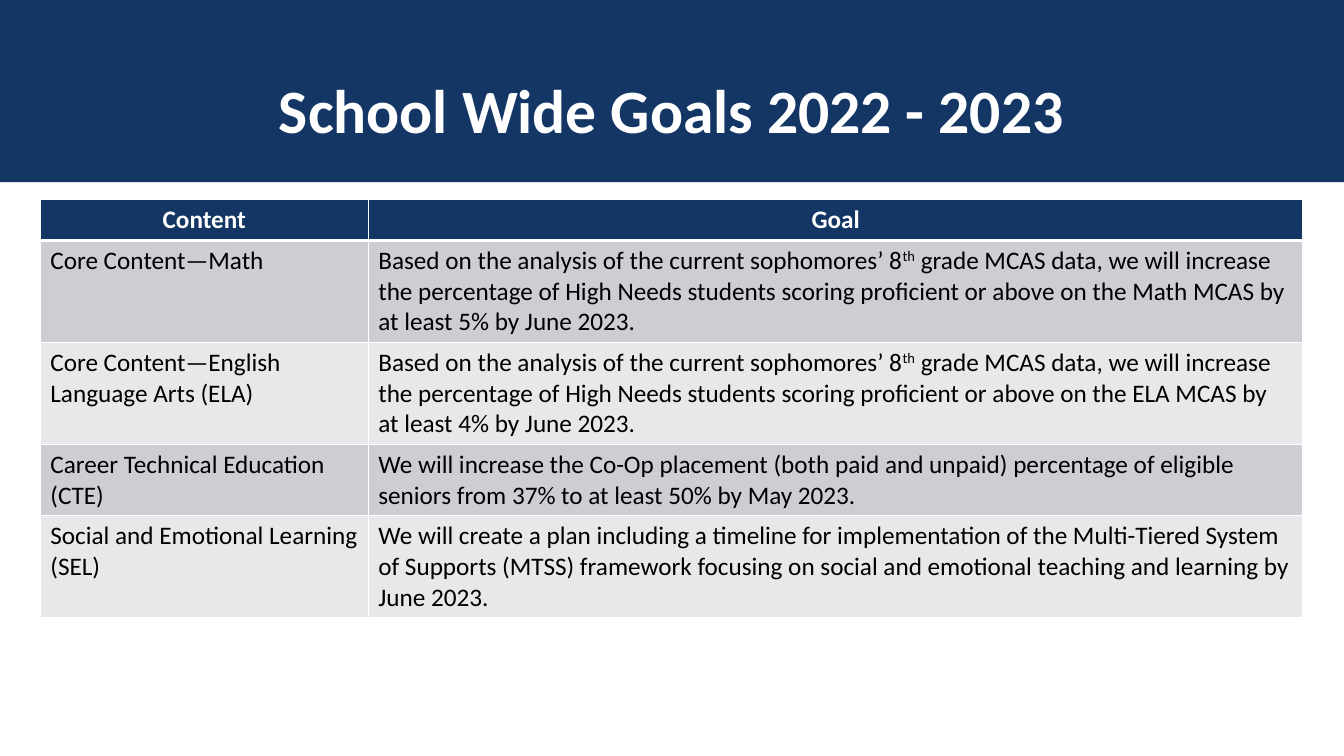
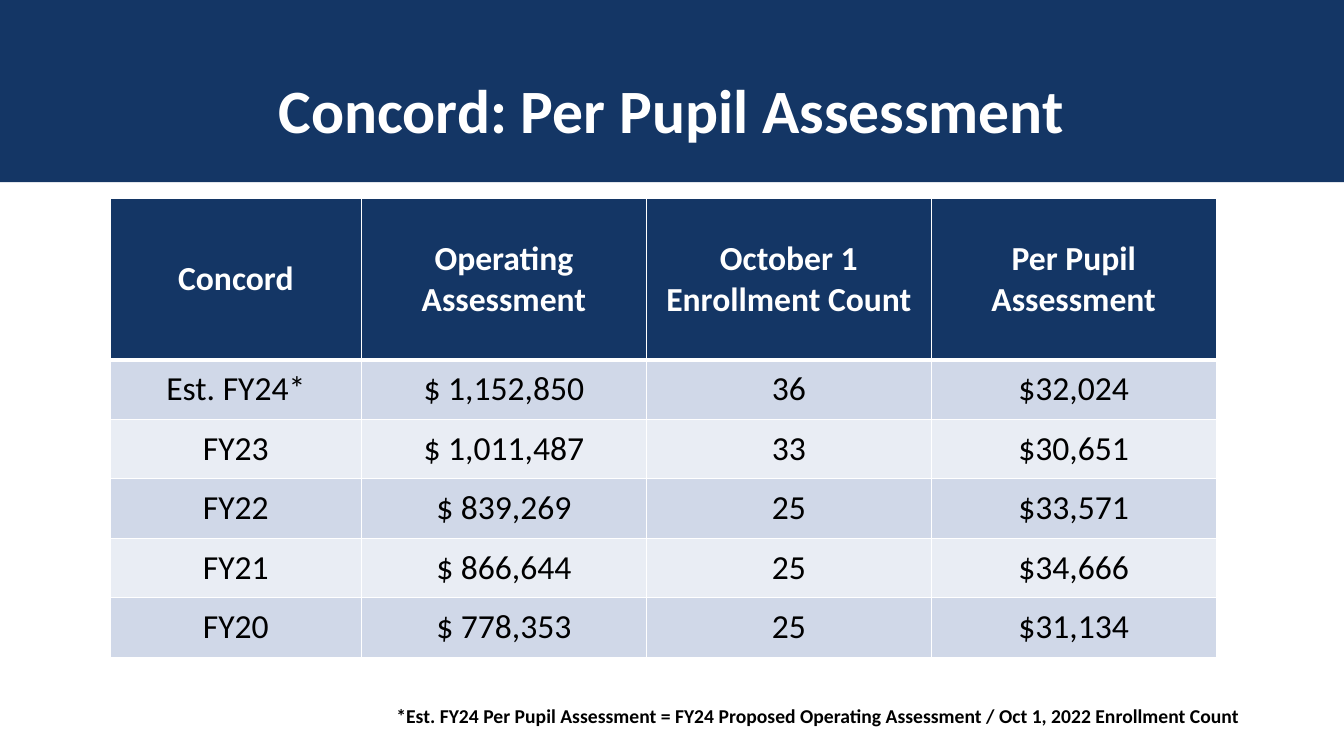
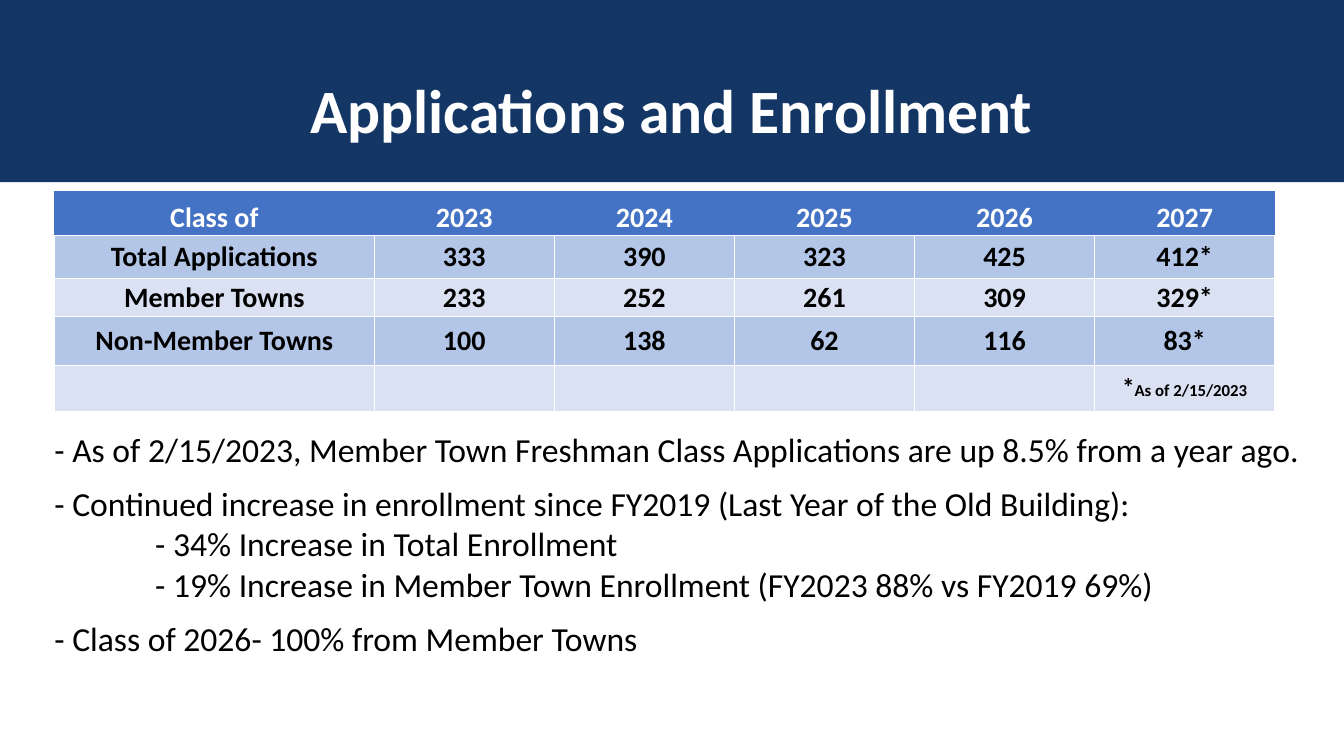
from lxml.etree import SubElement
from pptx import Presentation
from pptx.dml.color import RGBColor
from pptx.enum.shapes import MSO_SHAPE as Shape
from pptx.enum.text import MSO_ANCHOR as Anchor, PP_ALIGN as Align
from pptx.oxml.ns import qn
from pptx.util import Inches, Pt

NAVY, WHITE, BLACK = "143665", "FFFFFF", "000000"
NO_STYLE = "{2D5ABB26-0587-4C30-8999-92F81FD0307C}"
ALL_EDGES = "LRTB"


def color(value):
    return RGBColor.from_string(value)


def write(paragraph, text, size=18, ink=BLACK, bold=False, align=Align.LEFT,
          before=0, line=None, indent=0):
    if indent:
        paragraph._p.get_or_add_pPr().set("marL", str(Inches(indent)))
    paragraph.alignment = align
    paragraph.space_before = Pt(before)
    if line:
        paragraph.line_spacing = line
    pieces = [(text, {})] if isinstance(text, str) else text
    for words, special in pieces:
        if not words:
            continue
        run = paragraph.add_run()
        run.text = words
        run.font.name = "Calibri"
        run.font.size = Pt(special.get("size", size))
        run.font.bold = bold
        run.font.color.rgb = color(ink)
        if special.get("superscript"):
            run._r.get_or_add_rPr().set("baseline", "30000")


def border(cell, widths):
    properties = cell._tc.get_or_add_tcPr()
    for edge in ALL_EDGES:
        width = widths.get(edge)
        line = SubElement(properties, qn(f"a:ln{edge}"), w=str(Pt(width or 0)))
        if width:
            fill = SubElement(line, qn("a:solidFill"))
            SubElement(fill, qn("a:srgbClr"), val=WHITE)
        else:
            SubElement(line, qn("a:noFill"))


class Deck:
    COLUMNS = ROWS = 100

    def __init__(self):
        self.presentation = Presentation()
        self.presentation.slide_width = Inches(13.33)
        self.presentation.slide_height = Inches(7.5)
        self.slide = None

    def across(self, columns):
        return round(self.presentation.slide_width * columns / self.COLUMNS)

    def down(self, rows):
        return round(self.presentation.slide_height * rows / self.ROWS)

    def area(self, left, top, width, height):
        return self.across(left), self.down(top), self.across(width), self.down(height)

    def start(self, title):
        self.slide = self.presentation.slides.add_slide(self.presentation.slide_layouts[6])
        band = self.slide.shapes.add_shape(Shape.RECTANGLE, *self.area(0, 0, 100, 24.1))
        band.shadow.inherit = False
        band.fill.solid()
        band.fill.fore_color.rgb = color(NAVY)
        band.line.fill.background()
        self.text((7, 5.33, 86, 19.33), [(title, {})], anchor=Anchor.MIDDLE,
                  size=44, ink=WHITE, bold=True, align=Align.CENTER, line=0.9)

    def text(self, area, paragraphs, anchor=Anchor.TOP, inset=None, **style):
        frame = self.slide.shapes.add_textbox(*self.area(*area)).text_frame
        frame.word_wrap = True
        frame.vertical_anchor = anchor
        if inset is not None:
            frame.margin_left = frame.margin_right = Inches(inset)
            frame.margin_top = frame.margin_bottom = Inches(inset)
        for index, (words, special) in enumerate(paragraphs):
            paragraph = frame.add_paragraph() if index else frame.paragraphs[0]
            write(paragraph, words, **{**style, **special})

    def table(self, left, top, columns, rows, data, bands, size, head_fill=NAVY,
              head_edges=ALL_EDGES, rule=1, head_rule=3, anchors=(Anchor.TOP, Anchor.TOP),
              inset=(0.1, 0.05), align=Align.LEFT, bold=False):
        frame = self.slide.shapes.add_table(
            len(rows), len(columns), *self.area(left, top, sum(columns), sum(rows)))
        table = frame.table
        table.horz_banding = False
        table._tbl.tblPr.find(qn("a:tableStyleId")).text = NO_STYLE
        for column, width in zip(table.columns, columns):
            column.width = self.across(width)
        for number, (row, height, texts) in enumerate(zip(table.rows, rows, data)):
            row.height = self.down(height)
            head = number == 0
            widths = dict.fromkeys(head_edges if head else ALL_EDGES, rule)
            if number < 2:
                widths["B" if head else "T"] = head_rule
            for cell, words in zip(row.cells, texts):
                cell.margin_left = cell.margin_right = Inches(inset[0])
                cell.margin_top = cell.margin_bottom = Inches(inset[1])
                cell.vertical_anchor = anchors[0 if head else 1]
                border(cell, widths)
                cell.fill.solid()
                cell.fill.fore_color.rgb = color(head_fill if head else bands[(number - 1) % 2])
                write(cell.text_frame.paragraphs[0], words, size=size,
                      ink=WHITE if head else BLACK, bold=head or bold,
                      align=Align.CENTER if head else align)


def mcas_goal(subject, gain):
    return [
        ("Based on the analysis of the current sophomores’ 8", {}),
        ("th", {"superscript": True}),
        (" grade MCAS data, we will increase the percentage of High Needs students scoring "
         f"proficient or above on the {subject} MCAS by at least {gain} by June 2023.", {}),
    ]


def goals(deck):
    deck.start("School Wide Goals 2022 - 2023")
    deck.table(3, 26.4, [24.4, 69.55], [5.4, 13.5, 13.5, 9.4, 13.5], [
        ("Content", "Goal"),
        ("Core Content—Math", mcas_goal("Math", "5%")),
        ("Core Content—English Language Arts (ELA)", mcas_goal("ELA", "4%")),
        ("Career Technical Education (CTE)",
         "We will increase the Co-Op placement (both paid and unpaid) percentage of eligible "
         "seniors from 37% to at least 50% by May 2023."),
        ("Social and Emotional Learning (SEL)",
         "We will create a plan including a timeline for implementation of the Multi-Tiered "
         "System of Supports (MTSS) framework focusing on social and emotional teaching and "
         "learning by June 2023."),
    ], bands=("CCCED3", "E7E8EA"), size=18)


def assessment(deck):
    deck.start("Concord: Per Pupil Assessment")
    deck.table(8.2, 26.3, [18.7] + [21.2] * 3, [21.3] + [7.87] * 5, [
        ("Concord", "Operating Assessment", "October 1 Enrollment Count", "Per Pupil Assessment"),
        ("Est. FY24*", "$ 1,152,850", "36", "$32,024"),
        ("FY23", "$ 1,011,487", "33", "$30,651"),
        ("FY22", "$ 839,269", "25", "$33,571"),
        ("FY21", "$ 866,644", "25", "$34,666"),
        ("FY20", "$ 778,353", "25", "$31,134"),
    ], bands=("D0D8E8", "E9EDF4"), size=24, anchors=(Anchor.MIDDLE, Anchor.MIDDLE),
        inset=(0.07, 0.04), align=Align.CENTER)
    note = ("*Est. FY24 Per Pupil Assessment = FY24 Proposed Operating Assessment"
            " / Oct 1, 2022 Enrollment Count")
    deck.text((28.65, 91.6, 64.45, 6), [(note, {})], anchor=Anchor.MIDDLE,
              size=14, bold=True, align=Align.CENTER)


def enrollment(deck):
    deck.start("Applications and Enrollment")
    as_of = [("*", {"size": 18}), ("As of 2/15/2023", {"size": 12})]
    deck.table(4.05, 25.2, [23.8] + [13.4] * 5, [5.9, 5.7, 5.1, 6.4, 6.1], [
        ("Class of", "2023", "2024", "2025", "2026", "2027"),
        ("Total Applications", "333", "390", "323", "425", "412*"),
        ("Member Towns", "233", "252", "261", "309", "329*"),
        ("Non-Member Towns", "100", "138", "62", "116", "83*"),
        ("", "", "", "", "", as_of),
    ], bands=("B4C6E7", "D9E1F2"), size=20, head_fill="4472C4", head_edges="B",
        rule=0.5, head_rule=0.5, anchors=(Anchor.BOTTOM, Anchor.MIDDLE),
        inset=(0.01, 0), align=Align.CENTER, bold=True)
    gap, nested = {"before": 10}, {"indent": 1}
    deck.text((4.05, 56.7, 93.45, 32.7), [
        ("- As of 2/15/2023, Member Town Freshman Class Applications are up 8.5% "
         "from a year ago.", {}),
        ("- Continued increase in enrollment since FY2019 (Last Year of the Old Building):", gap),
        ("- 34% Increase in Total Enrollment", nested),
        ("- 19% Increase in Member Town Enrollment (FY2023 88% vs FY2019 69%)", nested),
        ("- Class of 2026- 100% from Member Towns", gap),
    ], inset=0, size=24)


def main():
    deck = Deck()
    for build in (goals, assessment, enrollment):
        build(deck)
    deck.presentation.save("out.pptx")


if __name__ == "__main__":
    main()
